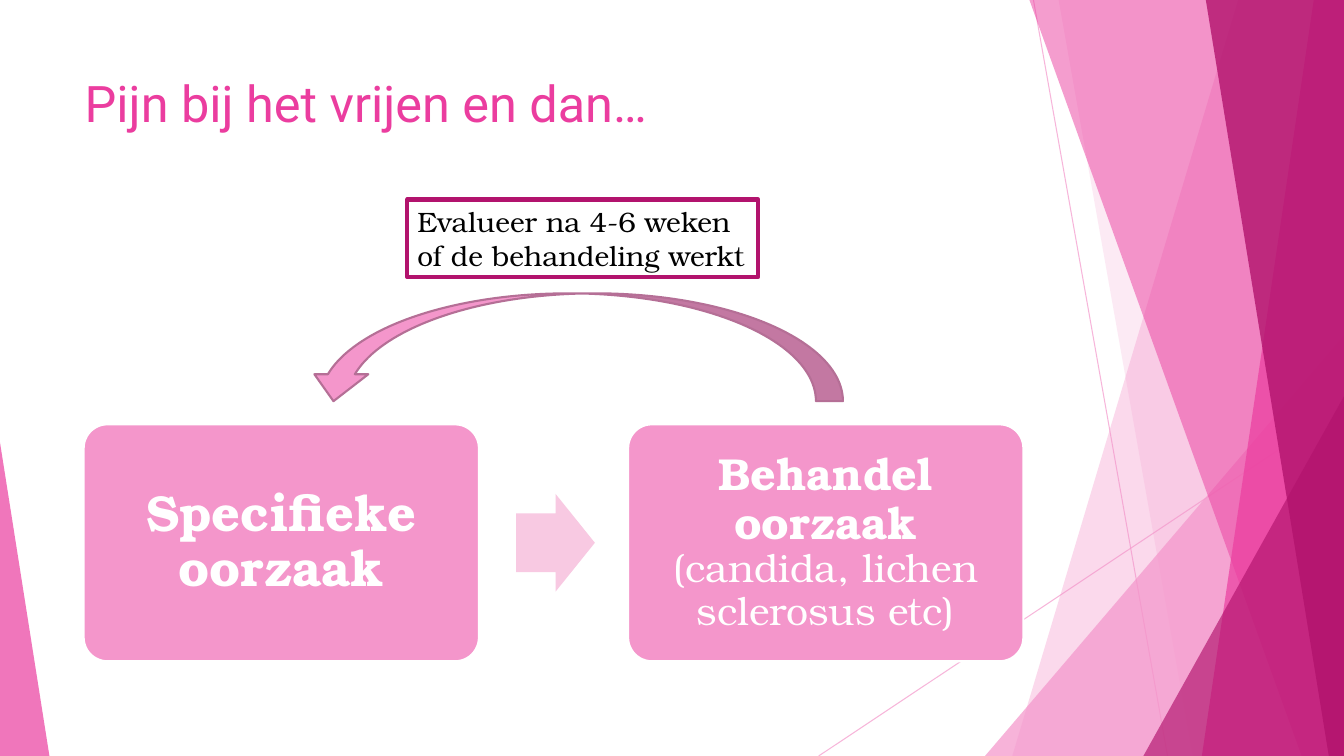
from lxml.etree import SubElement
from pptx import Presentation
from pptx.dml.color import RGBColor
from pptx.enum.shapes import MSO_CONNECTOR, MSO_SHAPE as SHAPE
from pptx.enum.text import MSO_ANCHOR as ANCHOR, PP_ALIGN as ALIGN
from pptx.oxml.ns import qn
from pptx.util import Pt

PX = 9144
WIDTH, HEIGHT = 1333, 750
WHITE = RGBColor(0xFF, 0xFF, 0xFF)
BLACK = RGBColor(0x00, 0x00, 0x00)
PINK = RGBColor(0xF4, 0x96, 0xCB)
PALE_PINK = RGBColor(0xF8, 0xC9, 0xE2)
MAGENTA = RGBColor(0xEB, 0x3D, 0x9F)
DARK_MAGENTA = RGBColor(0xB2, 0x13, 0x6D)
MAUVE = RGBColor(0xB5, 0x6F, 0x96)
TITLE_FONT, BODY_FONT = "Roboto", "TeX Gyre Bonum"


def px(*lengths):
    """Turn px lengths into EMU."""
    return [length * PX for length in lengths]


def set_opacity(shape, percent):
    """Make the colours of a shape partly transparent."""
    for colour in shape.element.iter(qn("a:srgbClr")):
        SubElement(colour, qn("a:alpha"), val=str(percent * 1000))


def paint(shape, fill=None, line=None, line_width=0):
    """Set the fill and outline of a shape and drop its shadow."""
    shape.shadow.inherit = False
    if fill is None:
        shape.fill.background()
    else:
        shape.fill.solid()
        shape.fill.fore_color.rgb = fill
    if line is None:
        shape.line.fill.background()
    else:
        shape.line.color.rgb = line
        shape.line.width = Pt(line_width)


def add_preset(slide, kind, box, adjustments=(), **colours):
    """Add a painted preset shape in a box."""
    shape = slide.shapes.add_shape(kind, *px(*box))
    for index, value in enumerate(adjustments):
        shape.adjustments[index] = value
    paint(shape, **colours)
    return shape


def add_run(paragraph, text, size, colour, font=BODY_FONT, bold=False):
    """Add one formatted run to a paragraph."""
    run = paragraph.add_run()
    run.text = text
    run.font.name = font
    run.font.size = Pt(size)
    run.font.bold = bold
    run.font.color.rgb = colour


def add_facet_line(slide, start, end):
    """Add a thin line behind the facets."""
    line = slide.shapes.add_connector(MSO_CONNECTOR.STRAIGHT, *px(*start, *end))
    line.line.color.rgb = PINK
    line.line.width = Pt(0.75)
    set_opacity(line, 70)
    SubElement(line.element.spPr, qn("a:effectLst"))


def add_facet(slide, top_left, top_right, bottom_left, colour, opacity):
    """Add a full-height facet that ends at the right edge."""
    builder = slide.shapes.build_freeform(top_left, 0, scale=PX)
    builder.add_line_segments(
        [(top_right, 0), (WIDTH, HEIGHT), (bottom_left, HEIGHT)], close=True)
    facet = builder.convert_to_shape()
    paint(facet, colour)
    set_opacity(facet, opacity)


def add_corner(slide, box, apex, colour, opacity):
    """Add a see-through triangle with its apex at a share of its width."""
    corner = add_preset(slide, SHAPE.ISOSCELES_TRIANGLE, box, [apex], fill=colour)
    set_opacity(corner, opacity)


def add_decoration(slide):
    """Add the faceted pattern at both edges of the slide."""
    add_facet_line(slide, (1025, 0), (1158, HEIGHT))
    add_facet_line(slide, (WIDTH, 403), (812, HEIGHT))
    add_facet(slide, 1228, WIDTH, 1004, PINK, 36)
    add_facet(slide, 1050, WIDTH, 1183, PINK, 20)
    add_corner(slide, (977, 333, 356, 417), 1, PINK, 72)
    add_facet(slide, 1021, WIDTH, 1291, MAGENTA, 50)
    add_facet(slide, 1303, WIDTH, 1192, MAGENTA, 70)
    add_facet(slide, 1196, WIDTH, 1318, DARK_MAGENTA, 80)
    add_corner(slide, (1134, 393, 199, 357), 1, DARK_MAGENTA, 66)
    add_corner(slide, (0, 439, 49, 311), 0, MAGENTA, 70)


def add_title(slide, box, text):
    """Place and fill the title placeholder."""
    title = slide.shapes.title
    title.left, title.top, title.width, title.height = px(*box)
    title.text_frame.vertical_anchor = ANCHOR.TOP
    paragraph = title.text_frame.paragraphs[0]
    paragraph.alignment = ALIGN.LEFT
    add_run(paragraph, text, 36, MAGENTA, TITLE_FONT)


def add_step(slide, box, margin, runs):
    """Add a rounded step with centred text."""
    step = add_preset(slide, SHAPE.ROUNDED_RECTANGLE, box, [0.1],
                      fill=PINK, line=WHITE, line_width=1.5)
    frame = step.text_frame
    frame.word_wrap = True
    frame.vertical_anchor = ANCHOR.MIDDLE
    (frame.margin_left, frame.margin_top,
     frame.margin_right, frame.margin_bottom) = px(*[margin] * 4)
    paragraph = frame.paragraphs[0]
    paragraph.alignment = ALIGN.CENTER
    paragraph.line_spacing = 0.9
    for text, size, bold in runs:
        add_run(paragraph, text, size, WHITE, bold=bold)


def add_process(slide, box):
    """Add the two steps at the ends of a box, with an arrow between them."""
    left, top, width, height = box
    step_width, arrow_width, arrow_height = 392, 78, 97
    add_step(slide, (left, top, step_width, height), 15,
             [("Specifieke oorzaak", 36, True)])
    add_preset(slide, SHAPE.RIGHT_ARROW,
               (left + 429, top + (height - arrow_height) // 2,
                arrow_width, arrow_height), [0.6, 0.5], fill=PALE_PINK)
    add_step(slide, (left + width - step_width, top, step_width, height), 13,
             [("Behandel oorzaak ", 32, True),
              ("(candida, lichen sclerosus etc)", 28, False)])


def add_feedback(slide, box):
    """Add the evaluation note with the curved arrow back below it."""
    left, top, width, height = box
    arrow_height = 107
    arrow = add_preset(slide, SHAPE.CURVED_UP_ARROW,
                       (left, top + height - arrow_height, width, arrow_height),
                       fill=PINK, line=MAUVE, line_width=1.5)
    arrow.rotation = 180
    note = add_preset(slide, SHAPE.RECTANGLE, (left + 100, top, 348, 77),
                      line=DARK_MAGENTA, line_width=3)
    frame = note.text_frame
    frame.word_wrap = True
    frame.vertical_anchor = ANCHOR.TOP
    paragraph = frame.paragraphs[0]
    paragraph.alignment = ALIGN.LEFT
    add_run(paragraph, "Evalueer na 4-6 weken of de behandeling werkt", 20, BLACK)


def main():
    """Build the slide and save it."""
    presentation = Presentation()
    presentation.slide_width, presentation.slide_height = px(WIDTH, HEIGHT)
    slide = presentation.slides.add_slide(presentation.slide_layouts[5])
    add_decoration(slide)
    add_title(slide, (74, 67, 940, 144), "Pijn bij het vrijen en dan…")
    add_process(slide, (83, 421, 932, 235))
    add_feedback(slide, (304, 198, 532, 200))
    presentation.save("out.pptx")


if __name__ == "__main__":
    main()
